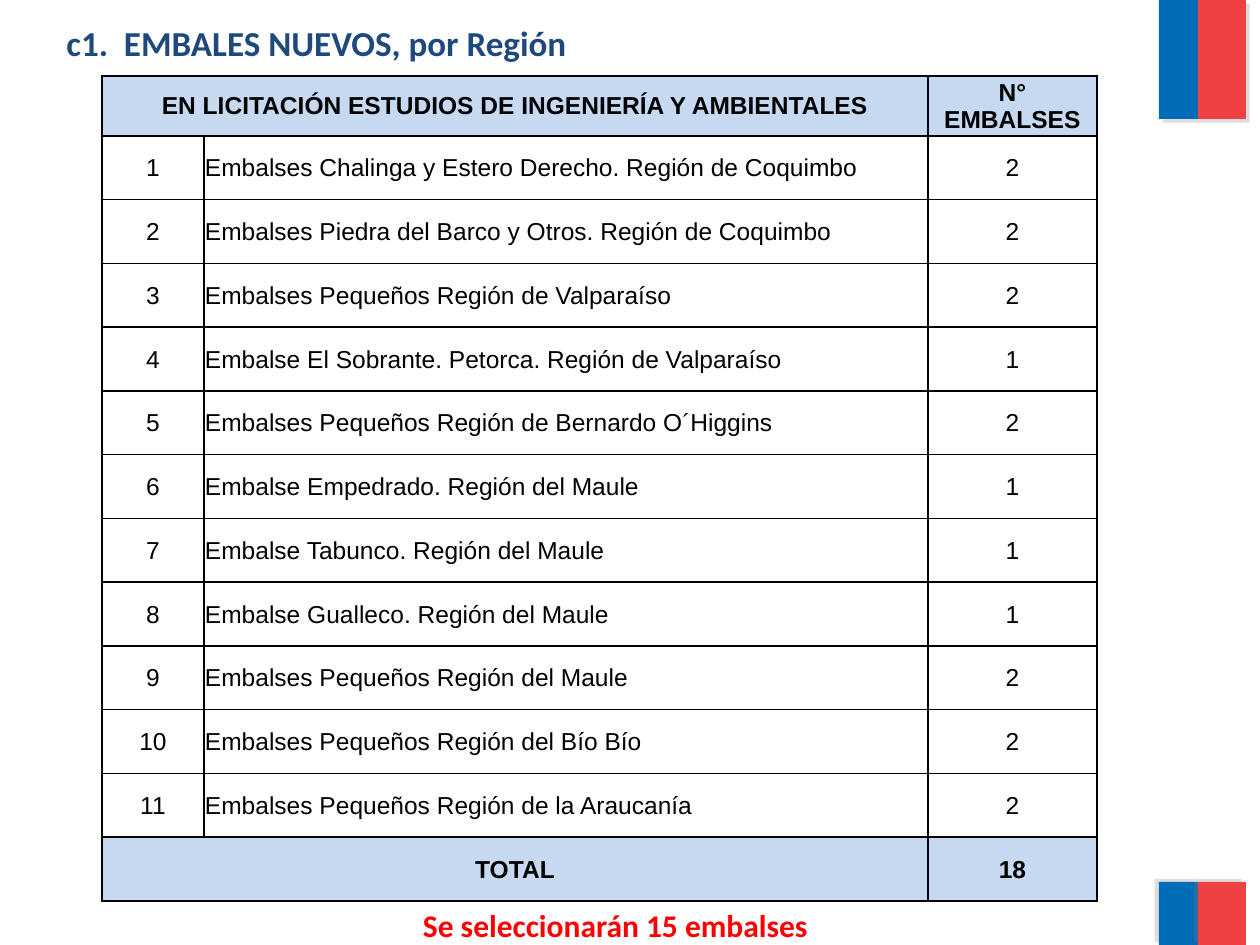
from lxml import etree
from pptx import Presentation
from pptx.dml.color import RGBColor
from pptx.enum.shapes import MSO_SHAPE
from pptx.enum.text import MSO_ANCHOR, MSO_AUTO_SIZE, PP_ALIGN
from pptx.oxml import parse_xml
from pptx.oxml.ns import qn
from pptx.util import Pt

RECTANGLE = MSO_SHAPE.RECTANGLE
MIDDLE = MSO_ANCHOR.MIDDLE
FIT_SHAPE = MSO_AUTO_SIZE.SHAPE_TO_FIT_TEXT
LEFT, CENTER = PP_ALIGN.LEFT, PP_ALIGN.CENTER

EMU_PER_PX = 914400 / 126
DRAWING_NS = "http://schemas.openxmlformats.org/drawingml/2006/main"
COLORS = {
    "flag_blue": "006CB7",
    "flag_red": "EF4144",
    "shadow": "808080",
    "title": "1F497D",
    "note": "FF0000",
    "text": "000000",
    "border": "000000",
    "band": "C6D9F1",
}

HEADER = ("EN LICITACIÓN ESTUDIOS DE INGENIERÍA Y AMBIENTALES", "N° EMBALSES")
RESERVOIRS = [
    ("Embalses Chalinga y Estero Derecho. Región de Coquimbo", 2),
    ("Embalses Piedra del Barco y Otros. Región de Coquimbo", 2),
    ("Embalses Pequeños Región de Valparaíso", 2),
    ("Embalse El Sobrante. Petorca. Región de Valparaíso", 1),
    ("Embalses Pequeños Región de Bernardo O´Higgins", 2),
    ("Embalse Empedrado. Región del Maule", 1),
    ("Embalse Tabunco. Región del Maule", 1),
    ("Embalse Gualleco. Región del Maule", 1),
    ("Embalses Pequeños Región del Maule", 2),
    ("Embalses Pequeños Región del Bío Bío", 2),
    ("Embalses Pequeños Región de la Araucanía", 2),
]
COLUMN_WIDTHS = (102, 724, 169)
HEADER_HEIGHT = 60
BODY_HEIGHT = 765


def px(value):
    return round(value * EMU_PER_PX)


def box(*lengths):
    return [px(length) for length in lengths]


def rgb(name):
    return RGBColor.from_string(COLORS[name])


def write(paragraph, text, color, alignment=LEFT, **font_values):
    paragraph.alignment = alignment
    run = paragraph.add_run()
    run.text = text
    run.font.color.rgb = rgb(color)
    for name, value in font_values.items():
        setattr(run.font, name, value)


def add_flag_bar(slide, bounds, color, shadow_angle):
    shape = slide.shapes.add_shape(RECTANGLE, *box(*bounds))
    shape.fill.solid()
    shape.fill.fore_color.rgb = rgb(color)
    shape.line.fill.background()
    shape.shadow.inherit = False
    effects = shape._element.spPr.find(qn("a:effectLst"))
    effects.append(parse_xml(
        f'<a:outerShdw xmlns:a="{DRAWING_NS}" dist="{Pt(3)}" dir="{shadow_angle * 60000}">'
        f'<a:srgbClr val="{COLORS["shadow"]}"><a:alpha val="25000"/></a:srgbClr>'
        "</a:outerShdw>"
    ))


def add_caption(slide, bounds, text, color, size, wrap, alignment):
    frame = slide.shapes.add_textbox(*box(*bounds)).text_frame
    frame.word_wrap = wrap
    frame.auto_size = FIT_SHAPE
    write(frame.paragraphs[0], text, color, alignment,
          name="Calibri", size=Pt(size), bold=True)


def add_borders(cell):
    properties = cell._tc.get_or_add_tcPr()
    for side in ("lnL", "lnR", "lnT", "lnB"):
        line = etree.SubElement(properties, qn(f"a:{side}"), w=str(Pt(1)))
        fill = etree.SubElement(line, qn("a:solidFill"))
        etree.SubElement(fill, qn("a:srgbClr"), val=COLORS["border"])


def format_cell(cell, banded):
    values = {
        "vertical_anchor": MIDDLE,
        "margin_left": px(1),
        "margin_right": px(1),
        "margin_top": px(1),
        "margin_bottom": 0,
    }
    for name, value in values.items():
        setattr(cell, name, value)
    add_borders(cell)
    if banded:
        cell.fill.solid()
        cell.fill.fore_color.rgb = rgb("band")
    else:
        cell.fill.background()


def add_reservoir_table(slide):
    total = sum(count for _, count in RESERVOIRS)
    rows = [(HEADER[0], None, HEADER[1])]
    rows += [(number, name, count) for number, (name, count) in enumerate(RESERVOIRS, 1)]
    rows.append(("TOTAL", None, total))

    table = slide.shapes.add_table(
        len(rows), len(COLUMN_WIDTHS),
        *box(102, 76, sum(COLUMN_WIDTHS), HEADER_HEIGHT + BODY_HEIGHT),
    ).table
    table.first_row = table.horz_banding = False
    for column, width in zip(table.columns, COLUMN_WIDTHS):
        column.width = px(width)
    for index, row in enumerate(table.rows):
        row.height = px(BODY_HEIGHT / (len(rows) - 1) if index else HEADER_HEIGHT)

    for row_index, row in enumerate(rows):
        banded = row[1] is None
        if banded:
            table.cell(row_index, 0).merge(table.cell(row_index, 1))
        for column_index, value in enumerate(row):
            cell = table.cell(row_index, column_index)
            format_cell(cell, banded)
            if value is not None:
                write(cell.text_frame.paragraphs[0], str(value), "text",
                      LEFT if column_index == 1 else CENTER,
                      name="Arial", size=Pt(14), bold=banded)


def main():
    presentation = Presentation()
    presentation.slide_width, presentation.slide_height = box(1260, 945)
    slide = presentation.slides.add_slide(presentation.slide_layouts[6])

    for top, height, shadow_angle in ((0, 119, 45), (882, 63, 215)):
        add_flag_bar(slide, (1159, top, 39, height), "flag_blue", shadow_angle)
        add_flag_bar(slide, (1198, top, 48, height), "flag_red", shadow_angle)

    add_caption(slide, (54, 15, 529, 55), "c1.  EMBALES NUEVOS, por Región",
                "title", 20, False, LEFT)
    add_reservoir_table(slide)
    add_caption(slide, (164, 900, 903, 50), "Se seleccionarán 15 embalses",
                "note", 18, True, CENTER)
    presentation.save("out.pptx")


if __name__ == "__main__":
    main()
